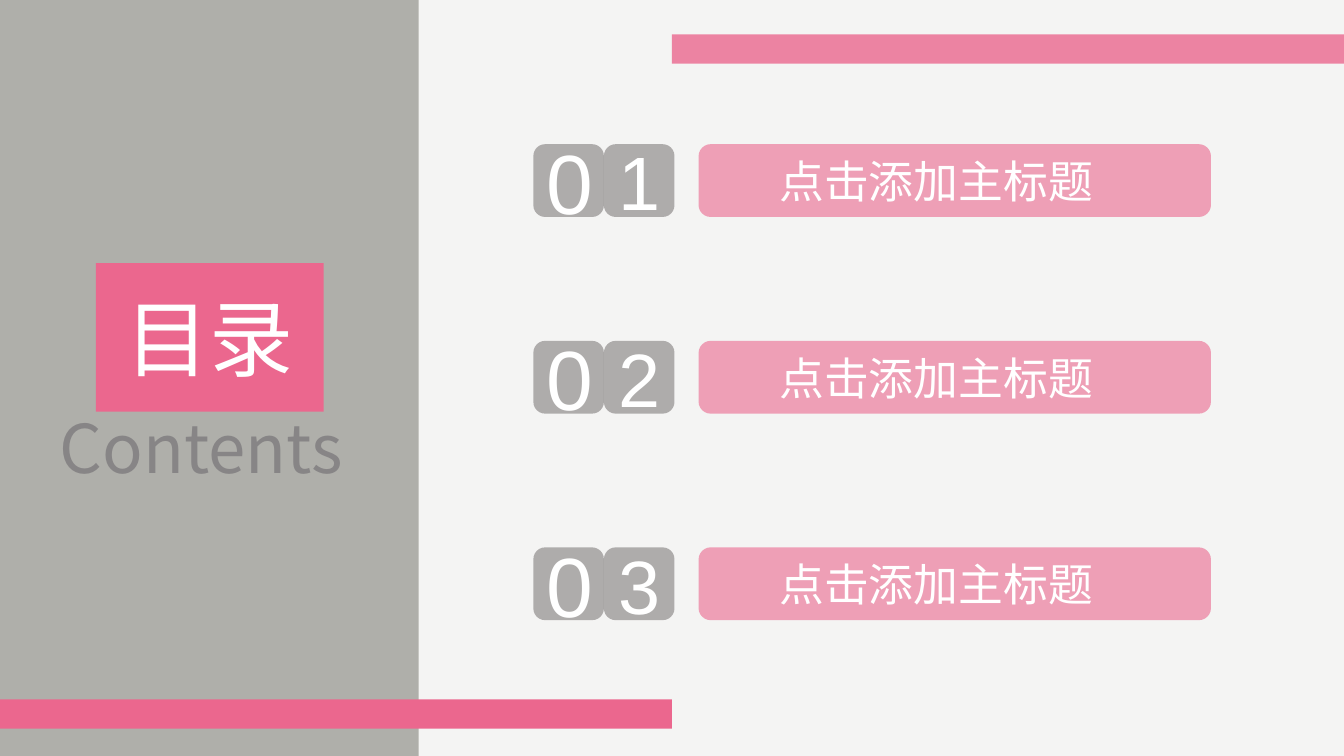
from pptx import Presentation
from pptx.dml.color import RGBColor
from pptx.enum import shapes, text
from pptx.oxml import ns
from pptx.util import Pt
from lxml import etree

COLORS = {
    "paper": "F4F4F3",
    "panel": "92928C",
    "pink": "EB678E",
    "badge": "767171",
    "caption": "878586",
    "white": "FFFFFF",
}
CJK = "Noto Sans CJK SC"
RECT = shapes.MSO_SHAPE.RECTANGLE
ROUNDED = shapes.MSO_SHAPE.ROUNDED_RECTANGLE
ROW_TOPS = (103, 243.5, 391)


def paint(shape, color, opacity=100):
    shape.fill.solid()
    shape.fill.fore_color.rgb = RGBColor.from_string(COLORS[color])
    if opacity < 100:
        tint = shape.element.spPr.find(".//" + ns.qn("a:srgbClr"))
        etree.SubElement(tint, ns.qn("a:alpha"), val=str(opacity * 1000))


def add_block(page, kind, left, top, width, height, color, opacity=100):
    block = page.shapes.add_shape(kind, Pt(left), Pt(top), Pt(width), Pt(height))
    block.shadow.inherit = False
    block.line.fill.background()
    paint(block, color, opacity)
    return block


def write(shape, words, size, font, color="white", align=text.PP_ALIGN.CENTER):
    frame = shape.text_frame
    frame.word_wrap = True
    frame.auto_size = text.MSO_AUTO_SIZE.NONE
    frame.vertical_anchor = text.MSO_ANCHOR.MIDDLE
    para = frame.paragraphs[0]
    para.alignment = align
    para.line_spacing = 1.0
    para.space_before = para.space_after = Pt(0)
    span = para.add_run()
    span.text = words
    span.font.size = Pt(size)
    span.font.bold = False
    span.font.name = font
    span.font.color.rgb = RGBColor.from_string(COLORS[color])
    etree.SubElement(span.font._element, ns.qn("a:ea"), typeface=font)


def place(holder, left, top, width, height):
    holder.left, holder.top = Pt(left), Pt(top)
    holder.width, holder.height = Pt(width), Pt(height)
    tree = holder.element.getparent()
    tree.append(holder.element)


def write_body(holder, words, size, color):
    write(holder, words, size, CJK, color, text.PP_ALIGN.LEFT)
    props = holder.text_frame.paragraphs[0]._p.get_or_add_pPr()
    props.set("marL", "0")
    props.set("indent", "0")
    etree.SubElement(props, ns.qn("a:buNone"))


def add_side_panel(page, title, caption, left, top, width, height):
    add_block(page, RECT, left, top, width, height, "panel", 70)
    place(title, left + 68.4, top + 188, 162.7, 106)
    paint(title, "pink")
    write(title, "目录", 60, CJK)
    place(caption, left + 35.3, top + 286.5, 229, 65.5)
    write_body(caption, "Contents", 48, "caption")


def add_entry(page, holder, number, left, top, height):
    badge_width = 50.4
    for column, (digit, size) in enumerate(zip(f"{number:02d}", (60, 54))):
        badge = add_block(page, ROUNDED, left + column * badge_width, top,
                          badge_width, height, "badge", 55)
        write(badge, digit, size, "Arial")
    add_block(page, ROUNDED, left + 118, top, 366, height, "pink", 60)
    place(holder, left + 168.5, top, 244, height)
    write_body(holder, "点击添加主标题", 32, "white")


def add_accent_bars(page, width):
    half = width / 2
    add_block(page, RECT, half, 24.5, half, 21, "pink", 80)
    add_block(page, RECT, 0, 499.5, half, 21, "pink")


def build_contents(deck):
    page = deck.slides.add_slide(deck.slide_layouts.get_by_name("Comparison"))
    backdrop = page.background.fill
    backdrop.solid()
    backdrop.fore_color.rgb = RGBColor.from_string(COLORS["paper"])
    title, caption, *entries = page.placeholders
    add_side_panel(page, title, caption, 0, 0, 299, 540)
    for number, (holder, top) in enumerate(zip(entries, ROW_TOPS), 1):
        add_entry(page, holder, number, 381, top, 52)
    add_accent_bars(page, 960)


def main():
    deck = Presentation()
    deck.slide_width, deck.slide_height = Pt(960), Pt(540)
    build_contents(deck)
    deck.save("out.pptx")


if __name__ == "__main__":
    main()
